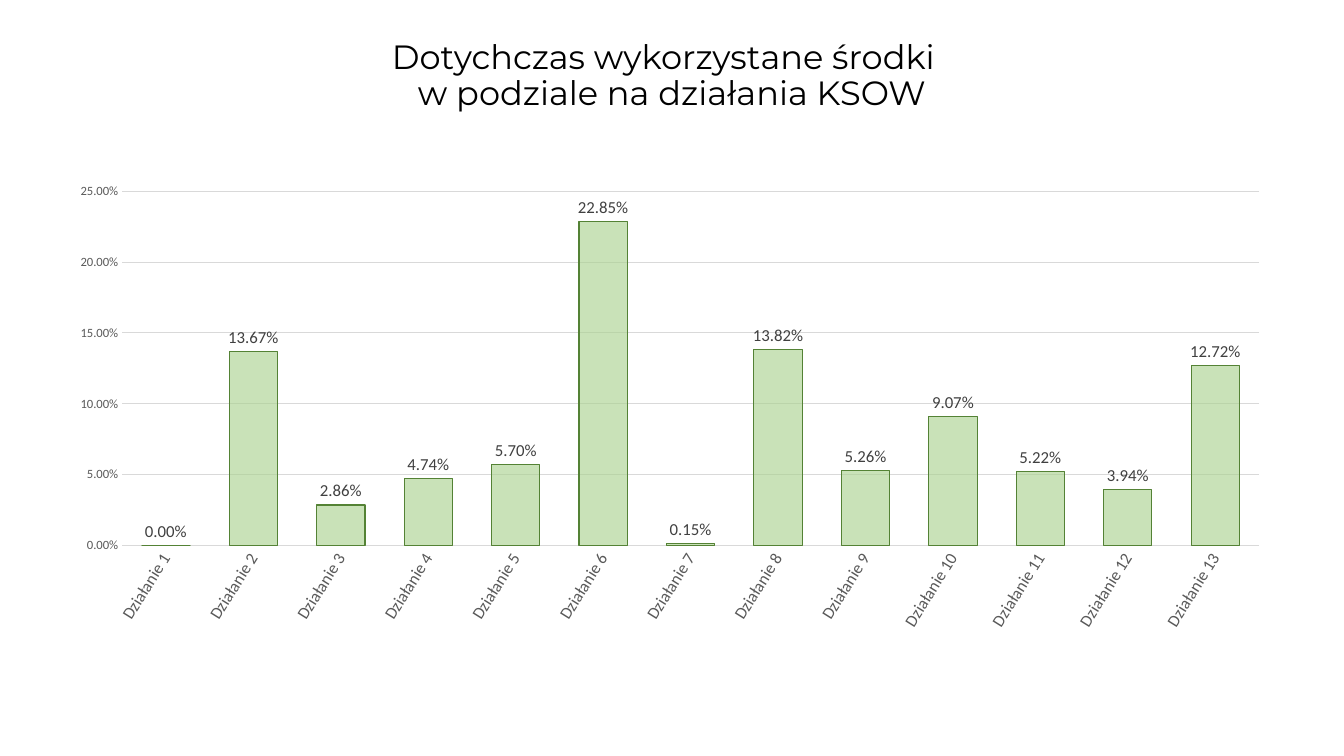
from dataclasses import dataclass

from lxml.etree import SubElement
from pptx import Presentation
from pptx.chart.data import CategoryChartData
from pptx.dml.color import RGBColor
from pptx.enum.chart import XL_CHART_TYPE, XL_LABEL_POSITION, XL_TICK_MARK
from pptx.enum.text import MSO_ANCHOR, PP_ALIGN
from pptx.oxml.ns import qn
from pptx.util import Cm, Pt


@dataclass(frozen=True)
class Theme:
    head: str = "Montserrat"
    body: str = "Calibri"
    ink: str = "000000"
    label: str = "404040"
    axis: str = "595959"
    grid: str = "D9D9D9"
    fill: str = "A9D18E"
    edge: str = "548235"
    alpha: int = 62
    title: int = 24
    text: int = 12
    base: int = 10
    small: int = 9
    rule: float = 0.75


SHARES = [0, 0.1367, 0.0286, 0.0474, 0.057, 0.2285, 0.0015,
          0.1382, 0.0526, 0.0907, 0.0522, 0.0394, 0.1272]
PERCENT = "0.00%"
TILT = -58


def set_font(font, name, size, color):
    font.name, font.size, font.bold = name, Pt(size), False
    font.color.rgb = RGBColor.from_string(color)


def set_line(line, color, width):
    line.color.rgb = RGBColor.from_string(color)
    line.width = Pt(width)


def set_plot(chart, box, area):
    """Fix the inner plot area, given in cm on the slide, within the chart box."""
    plot = chart._chartSpace.chart.plotArea
    layout = plot.find(qn("c:layout"))
    if layout is None:
        layout = SubElement(plot, qn("c:layout"))
        plot.insert(0, layout)
    left, top, width, height = box
    x, y, w, h = area
    parts = {"layoutTarget": "inner", "xMode": "edge", "yMode": "edge",
             "x": (x - left) / width, "y": (y - top) / height,
             "w": w / width, "h": h / height}
    manual = SubElement(layout, qn("c:manualLayout"))
    for tag, value in parts.items():
        SubElement(manual, qn(f"c:{tag}")).set("val", str(value))


class Deck:
    """Holds the theme and the slide being built."""

    def __init__(self, theme):
        self.theme = theme
        self.file = Presentation()
        self.file.slide_width, self.file.slide_height = Cm(33.87), Cm(19.05)
        self.slide = self.file.slides.add_slide(self.file.slide_layouts[6])

    def text(self, lines, box, *, font, size, color, align=PP_ALIGN.CENTER,
             anchor=MSO_ANCHOR.MIDDLE, spacing=0.9):
        """Add a text box; each line is a pair of its words and right margin in cm."""
        frame = self.slide.shapes.add_textbox(*map(Cm, box)).text_frame
        frame.word_wrap, frame.vertical_anchor = True, anchor
        for i, (words, margin) in enumerate(lines):
            para = frame.add_paragraph() if i else frame.paragraphs[0]
            para.alignment, para.line_spacing = align, spacing
            para._p.get_or_add_pPr().set("marR", str(Cm(margin)))
            run = para.add_run()
            run.text = words
            set_font(run.font, font, size, color)

    def columns(self, names, values, box, area):
        theme = self.theme
        data = CategoryChartData(number_format=PERCENT)
        data.categories = names
        data.add_series("Series 1", values)
        chart = self.slide.shapes.add_chart(
            XL_CHART_TYPE.COLUMN_CLUSTERED, *map(Cm, box), data).chart
        chart.has_legend = chart.has_title = False
        set_font(chart.font, theme.body, theme.base, theme.ink)
        set_plot(chart, box, area)
        self.axes(chart.category_axis, chart.value_axis)
        self.bars(chart.plots[0])

    def axes(self, cat, val):
        theme = self.theme
        for axis, size in ((cat, theme.text), (val, theme.small)):
            axis.major_tick_mark = axis.minor_tick_mark = XL_TICK_MARK.NONE
            set_font(axis.tick_labels.font, theme.body, size, theme.axis)
        set_line(cat.format.line, theme.grid, theme.rule)
        turn = cat._element.find(qn("c:txPr")).find(qn("a:bodyPr"))
        turn.set("rot", str(TILT * 60000))
        turn.set("vert", "horz")
        val.minimum_scale, val.maximum_scale, val.major_unit = 0, 0.25, 0.05
        val.tick_labels.number_format = PERCENT
        val.tick_labels.number_format_is_linked = False
        val.format.line.fill.background()
        set_line(val.major_gridlines.format.line, theme.grid, theme.rule)

    def bars(self, plot):
        theme = self.theme
        plot.gap_width, plot.overlap, plot.vary_by_categories = 81, 100, False
        form = plot.series[0].format
        form.fill.solid()
        form.fill.fore_color.rgb = RGBColor.from_string(theme.fill)
        color = plot.series[0]._element.find(qn("c:spPr")).find(
            qn("a:solidFill")).find(qn("a:srgbClr"))
        SubElement(color, qn("a:alpha")).set("val", str(theme.alpha * 1000))
        set_line(form.line, theme.edge, theme.rule)
        plot.has_data_labels = True
        labels = plot.data_labels
        labels.show_value = True
        labels.position = XL_LABEL_POSITION.OUTSIDE_END
        labels.number_format, labels.number_format_is_linked = PERCENT, False
        set_font(labels.font, theme.body, theme.text, theme.label)


def main():
    theme = Theme()
    deck = Deck(theme)
    deck.text([("Dotychczas wykorzystane środki", 0.43),
               ("w podziale na działania KSOW", 0)],
              (0.38, 0.9, 33.1, 2.08),
              font=theme.head, size=theme.title, color=theme.ink)
    names = [f"Działanie {i}" for i in range(1, len(SHARES) + 1)]
    deck.columns(names, SHARES, box=(1.42, 4.42, 30.91, 11.71),
                 area=(3.08, 4.82, 28.65, 8.93))
    deck.file.save("out.pptx")


if __name__ == "__main__":
    main()
